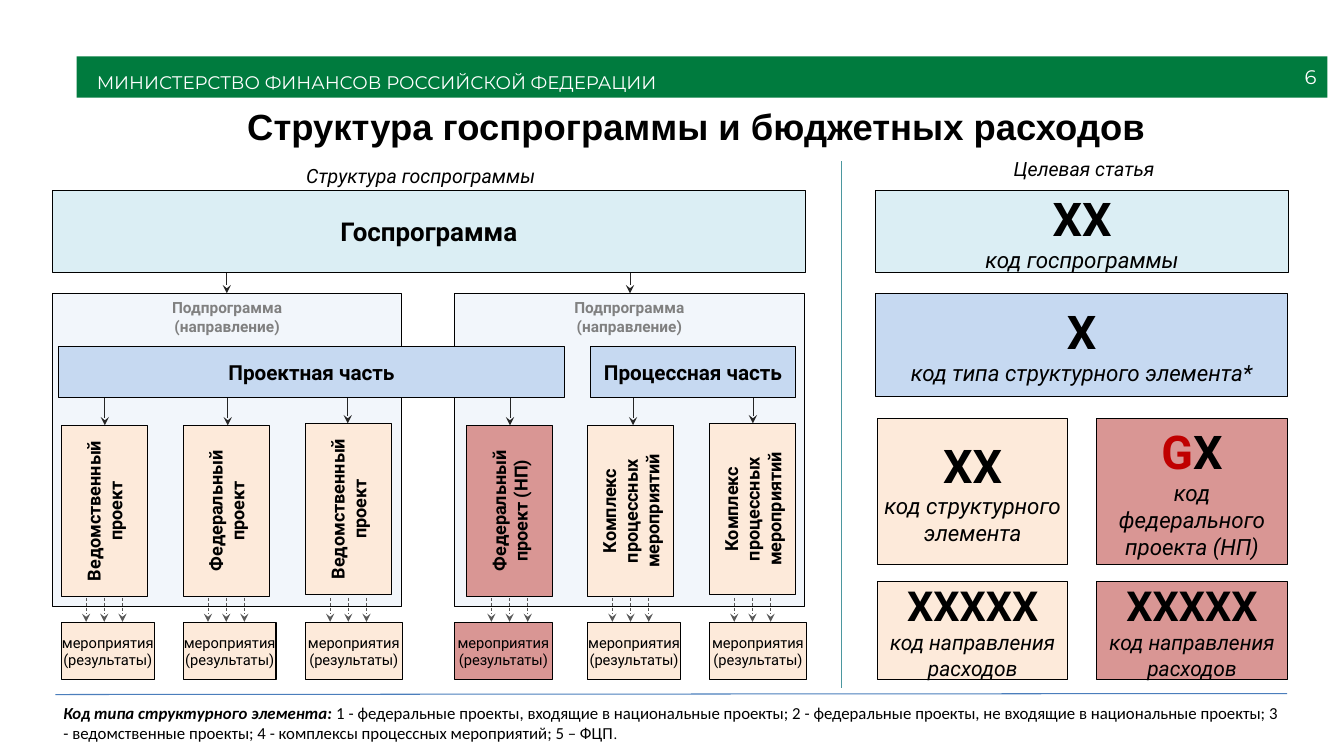
from dataclasses import dataclass

from lxml.etree import SubElement
from pptx import Presentation
from pptx.dml.color import RGBColor
from pptx.enum.dml import MSO_LINE
from pptx.enum.shapes import MSO_CONNECTOR, MSO_SHAPE
from pptx.enum.text import MSO_ANCHOR, MSO_AUTO_SIZE, PP_ALIGN
from pptx.oxml.ns import qn
from pptx.util import Pt

GREEN, WHITE, BLACK, GRAY, RED = "007B3E", "FFFFFF", "000000", "808080", "C00000"
AQUA, BLUE, PEACH, ROSE = "DBEEF4", "C6D9F1", "FDEADA", "D99694"
BOX_INSETS = (2.9, 3.6, 2.9, 3.6)
TEXT_INSETS = (7.2, 3.6, 7.2, 3.6)


def color(value):
    return RGBColor.from_string(value)


@dataclass
class Words:
    text: str
    size: float
    bold: bool = False
    italic: bool = False
    shade: str = BLACK
    family: str = "Roboto"

    def style(self, font):
        font.name = self.family
        font.size = Pt(self.size)
        font.bold = self.bold
        font.italic = self.italic
        font.color.rgb = color(self.shade)


class SlideBuilder:
    def __init__(self, slide):
        self.slide = slide

    def set_text(self, shape, paragraphs, anchor=MSO_ANCHOR.MIDDLE, align=PP_ALIGN.CENTER,
                 insets=BOX_INSETS):
        frame = shape.text_frame
        frame.word_wrap = True
        frame.auto_size = MSO_AUTO_SIZE.NONE
        frame.vertical_anchor = anchor
        (frame.margin_left, frame.margin_top,
         frame.margin_right, frame.margin_bottom) = map(Pt, insets)
        for index, content in enumerate(paragraphs):
            paragraph = frame.add_paragraph() if index else frame.paragraphs[0]
            paragraph.alignment = align
            if isinstance(content, Words):
                paragraph.text = content.text
                content.style(paragraph.font)
                continue
            for words in content:
                run = paragraph.add_run()
                run.text = words.text
                words.style(run.font)
        return frame

    def title(self, left, top, width, height, words):
        shape = self.slide.shapes.title
        shape.left, shape.top, shape.width, shape.height = map(Pt, (left, top, width, height))
        self.set_text(shape, [words], insets=(0, 1.4, 0, 0))

    def text(self, left, top, width, height, content, **layout):
        shape = self.slide.shapes.add_textbox(*map(Pt, (left, top, width, height)))
        layout = {"anchor": MSO_ANCHOR.TOP, "insets": TEXT_INSETS, **layout}
        self.set_text(shape, [content], **layout)

    def box(self, left, top, width, height, fill, paragraphs, opacity=None, outlined=True,
            vertical=False, **layout):
        shape = self.slide.shapes.add_shape(
            MSO_SHAPE.RECTANGLE, *map(Pt, (left, top, width, height)))
        shape.shadow.inherit = False
        shape.fill.solid()
        shape.fill.fore_color.rgb = color(fill)
        if opacity:
            solid = shape._element.spPr.find(qn("a:solidFill"))
            SubElement(solid[0], qn("a:alpha"), val=str(opacity * 1000))
        if outlined:
            shape.line.color.rgb = color(BLACK)
            shape.line.width = Pt(0.75)
        else:
            shape.line.fill.background()
        frame = self.set_text(shape, paragraphs, **layout)
        if vertical:
            shape._element.txBody.bodyPr.set("vert", "vert270")
        return frame

    def line(self, start_x, start_y, end_x, end_y, shade, width=0.5, arrow=False, dashed=False):
        connector = self.slide.shapes.add_connector(
            MSO_CONNECTOR.STRAIGHT, *map(Pt, (start_x, start_y, end_x, end_y)))
        connector.line.color.rgb = color(shade)
        connector.line.width = Pt(width)
        if dashed:
            connector.line.dash_style = MSO_LINE.DASH
        if arrow:
            outline = connector._element.spPr.find(qn("a:ln"))
            SubElement(outline, qn("a:tailEnd"), type="stealth")
        SubElement(connector._element.spPr, qn("a:effectLst"))

    def arrow(self, x, top, bottom, shade="262626", dashed=False):
        self.line(x, top, x, bottom, shade, arrow=True, dashed=dashed)


def build_header(builder):
    ministry = Words("МИНИСТЕРСТВО ФИНАНСОВ РОССИЙСКОЙ ФЕДЕРАЦИИ", 13, shade=WHITE,
                     family="Montserrat")
    frame = builder.box(54.7, 40.3, 893.5, 29.5, GREEN, [ministry], outlined=False,
                        anchor=MSO_ANCHOR.TOP, align=PP_ALIGN.LEFT, insets=(14.4, 2.9, 0, 5.8))
    frame.paragraphs[0].line_spacing = 1.5
    builder.text(731.5, 40.3, 216, 28.8, Words("6", 14, shade=WHITE, family="Montserrat"),
                 anchor=MSO_ANCHOR.MIDDLE, align=PP_ALIGN.RIGHT)
    builder.title(52.6, 73.4, 889.9, 32.4,
                  Words("Структура госпрограммы и бюджетных расходов", 26, bold=True,
                        family="Arial"))


def build_program(builder):
    columns = [
        (43.9, 303.8, 74.9, 43.9, 66.2, PEACH, "Ведомственный проект"),
        (131, 303.8, 162.7, 131, 66.2, PEACH, "Федеральный проект"),
        (218.2, 302.4, 248.4, 218.2, 69.1, PEACH, "Ведомственный проект"),
        (333.4, 303.8, 364.3, 324.7, 69.8, ROSE, "Федеральный проект (НП)"),
        (419.8, 303.8, 452.2, 419.8, 66.2, PEACH, "Комплекс процессных мероприятий"),
        (506.9, 302.4, 537.8, 506.9, 69.1, PEACH, "Комплекс процессных мероприятий"),
    ]
    builder.text(31.7, 113.8, 537.8, 24.5, Words("Структура госпрограммы", 14, italic=True))
    for left, arrow_x in ((37.4, 162), (324.7, 450)):
        subprogram = [Words(text, 11, bold=True, shade=GRAY)
                      for text in ("Подпрограмма", "(направление)")]
        builder.box(left, 209.5, 249.8, 223.9, BLUE, subprogram, opacity=22,
                    anchor=MSO_ANCHOR.TOP)
        builder.arrow(arrow_x, 180, 209.5)
    for _, top, arrow_x, *_ in columns:
        builder.arrow(arrow_x, 273.6, top)
    builder.box(37.4, 136.1, 537.8, 58.3, AQUA, [Words("Госпрограмма", 18.5, bold=True)])
    for left, width, part in ((41.8, 361.4, "Проектная часть"),
                              (421.9, 146.2, "Процессная часть")):
        builder.box(left, 247.7, width, 36, BLUE, [Words(part, 14.8, bold=True)])
    for left, top, _, result_left, result_width, fill, project in columns:
        builder.box(left, top, 61.2, 122.4, fill, [Words(project, 12.9, bold=True)],
                    vertical=True)
        builder.box(result_left, 445, result_width, 40.3, fill,
                    [Words("мероприятия\v(результаты)", 10.5)], insets=(0, 3.6, 0, 3.6))
        for offset in (-13, 0, 13):
            builder.arrow(left + 30.6 + offset, 427, 444.2, "595959", dashed=True)


def build_target_article(builder):
    builder.text(627.1, 108.7, 294.5, 24.5, Words("Целевая статья", 14, italic=True))
    federal_code = [Words("G", 33.2, bold=True, shade=RED), Words("Х", 33.2, bold=True)]
    program_code, type_code, expense_code = (
        Words(text, size, bold=True)
        for text, size in (("ХХ", 33.2), ("Х", 33.2), ("ХХХХХ", 29.5)))
    codes = [
        (625.7, 136.1, 294.5, 58.3, AQUA, program_code, "код госпрограммы", 16),
        (625.7, 209.5, 293.8, 73.4, BLUE, type_code, "код типа структурного элемента*", 16),
        (627.1, 298.8, 135.4, 104.4, PEACH, program_code, "код структурного элемента", 16),
        (783.4, 298.8, 136.1, 104.4, ROSE, federal_code, "код федерального проекта (НП)", 16),
        (627.1, 415.4, 135.4, 69.8, PEACH, expense_code, "код направления расходов", 15),
        (783.4, 415.4, 136.1, 69.8, ROSE, expense_code, "код направления расходов", 15),
    ]
    for left, top, width, height, fill, code, caption, size in codes:
        builder.box(left, top, width, height, fill, [code, Words(caption, size, italic=True)])
    builder.line(601.2, 115.2, 601.2, 491.8, "4B979F")


def build_footnote(builder):
    builder.line(919.4, 495.4, 39.6, 496.1, "4B7EBC", width=0.75)
    builder.text(38.2, 498.2, 882.7, 7.2, [
        Words("Код типа структурного элемента: ", 12, bold=True, italic=True, family="Calibri"),
        Words("1 - федеральные проекты, входящие в национальные проекты; "
              "2 - федеральные проекты, не входящие в национальные проекты; "
              "3 - ведомственные проекты; 4 - комплексы процессных мероприятий; 5 – ФЦП",
              12, family="Calibri"),
        Words(".", 10.5, family="Calibri"),
    ], align=PP_ALIGN.JUSTIFY)


def main():
    presentation = Presentation()
    presentation.slide_width, presentation.slide_height = Pt(960), Pt(540)
    slide = presentation.slides.add_slide(presentation.slide_layouts[5])
    builder = SlideBuilder(slide)
    build_header(builder)
    build_program(builder)
    build_target_article(builder)
    build_footnote(builder)
    presentation.save("out.pptx")


if __name__ == "__main__":
    main()
